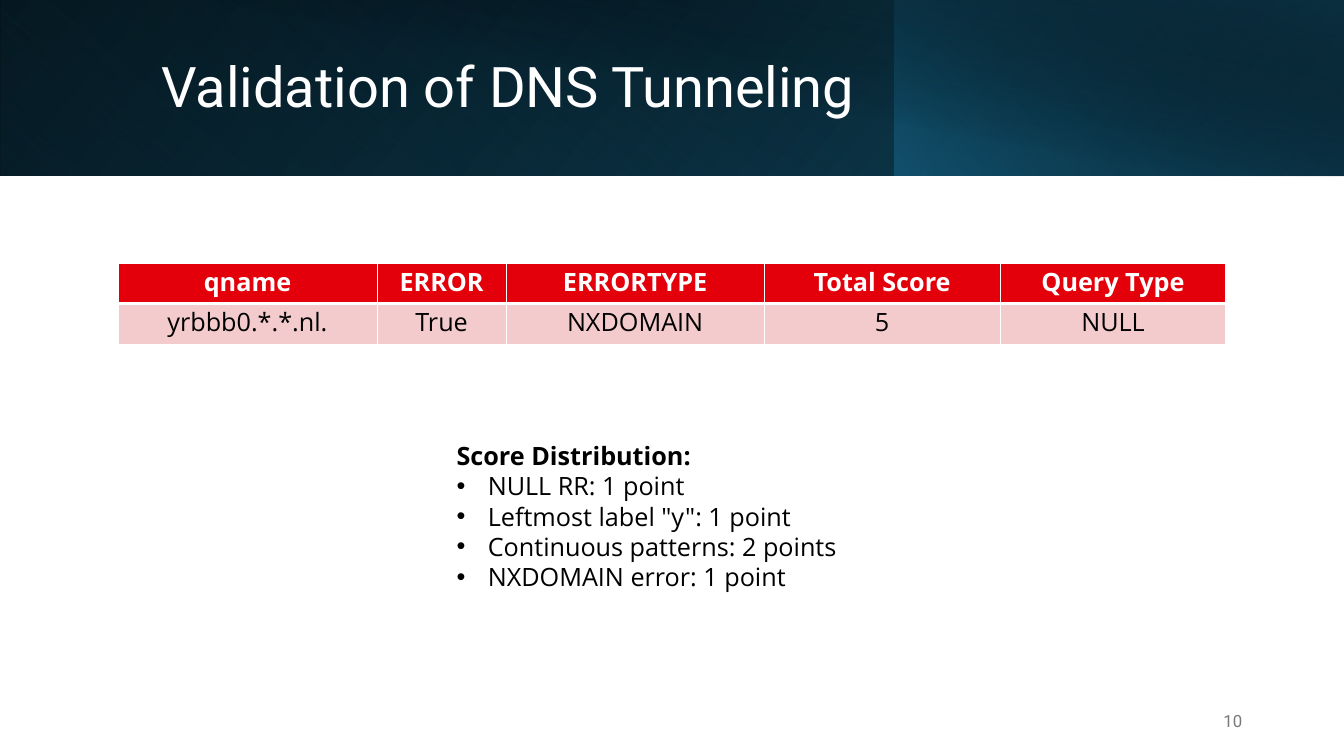
from dataclasses import dataclass

from pptx import Presentation
from pptx.dml.color import RGBColor
from pptx.enum.shapes import MSO_SHAPE
from pptx.enum.text import MSO_ANCHOR, MSO_AUTO_SIZE, PP_ALIGN
from pptx.oxml import parse_xml
from pptx.oxml.ns import nsdecls, qn
from pptx.util import Pt

EMU_PER_PX = 9144  # 100 px to the inch


@dataclass(frozen=True)
class Theme:
    white: str = "FFFFFF"
    black: str = "000000"
    blue: str = "156082"
    mid_blue: str = "104862"
    deep_blue: str = "0B3041"
    header_red: str = "E3000B"
    row_pink: str = "F4CBCC"
    grey: str = "797979"
    heading_font: str = "Roboto"
    body_font: str = "Open Sans"
    title_size: int = 40
    body_size: int = 18
    number_size: int = 12
    table_spacing: float = 21.8
    thin_border: float = 0.75
    header_border: float = 2.04


def px(length):
    return length * EMU_PER_PX


class SlideBuilder:
    def __init__(self, slide, theme):
        self.slide = slide
        self.theme = theme

    def add_run(self, paragraph, text, size, font, color, bold=False):
        run = paragraph.add_run()
        run.text = text
        run.font.size = Pt(size)
        run.font.name = font
        run.font.bold = bold
        run.font.color.rgb = RGBColor.from_string(color)

    def body_run(self, paragraph, text, color, bold=False):
        self.add_run(paragraph, text, self.theme.body_size, self.theme.body_font, color, bold)

    def gradient_band(self, box, angle, stops, flip=True, rotation=0):
        """Stops are (position %, colour, opacity %)."""
        band = self.slide.shapes.add_shape(MSO_SHAPE.RECTANGLE, *map(px, box))
        band.shadow.inherit = False
        band.line.fill.background()
        band.rotation = rotation
        properties = band.element.spPr
        if flip:
            properties.find(qn("a:xfrm")).set("flipH", "1")
        stop_xml = "".join(
            f'<a:gs pos="{position * 1000}"><a:srgbClr val="{color}">'
            f'<a:alpha val="{opacity * 1000}"/></a:srgbClr></a:gs>'
            for position, color, opacity in stops)
        properties.find(qn("a:prstGeom")).addnext(parse_xml(
            f'<a:gradFill {nsdecls("a")} rotWithShape="1"><a:gsLst>{stop_xml}</a:gsLst>'
            f'<a:lin ang="{angle * 60000}" scaled="0"/></a:gradFill>'))

    def title(self, box, text):
        title = self.slide.shapes.title
        title.left, title.top, title.width, title.height = map(px, box)
        frame = title.text_frame
        frame.word_wrap = True
        frame.auto_size = MSO_AUTO_SIZE.NONE
        frame.vertical_anchor = MSO_ANCHOR.MIDDLE
        paragraph = frame.paragraphs[0]
        paragraph.alignment = PP_ALIGN.LEFT
        paragraph.line_spacing = 0.9
        self.add_run(paragraph, text, self.theme.title_size,
                     self.theme.heading_font, self.theme.white)
        # Bring the title in front of the bands
        title.element.getparent().append(title.element)

    def text_frame(self, box):
        frame = self.slide.shapes.add_textbox(*map(px, box)).text_frame
        frame.word_wrap = True
        return frame

    def cell_borders(self, cell, top, bottom):
        thin = self.theme.thin_border
        cell_properties = cell._tc.get_or_add_tcPr()
        for side, width in (("L", thin), ("R", thin), ("T", top), ("B", bottom)):
            cell_properties.append(parse_xml(
                f'<a:ln{side} {nsdecls("a")} w="{int(Pt(width))}"><a:solidFill>'
                f'<a:srgbClr val="{self.theme.white}"/></a:solidFill></a:ln{side}>'))

    def table(self, left, top, column_widths, row_height, rows):
        theme = self.theme
        table = self.slide.shapes.add_table(
            len(rows), len(column_widths), px(left), px(top),
            px(sum(column_widths)), px(row_height * len(rows))).table
        for column, width in zip(table.columns, column_widths):
            column.width = px(width)
        for row_index, values in enumerate(rows):
            header = row_index == 0
            thin, thick = theme.thin_border, theme.header_border
            for column_index, value in enumerate(values):
                cell = table.cell(row_index, column_index)
                self.cell_borders(cell, *((thin, thick) if header else (thick, thin)))
                cell.fill.solid()
                cell.fill.fore_color.rgb = RGBColor.from_string(
                    theme.header_red if header else theme.row_pink)
                paragraph = cell.text_frame.paragraphs[0]
                paragraph.alignment = PP_ALIGN.CENTER
                paragraph.line_spacing = Pt(theme.table_spacing)
                self.body_run(paragraph, value, theme.white if header else theme.black, header)

    def bullet_list(self, box, heading, items, indent):
        frame = self.text_frame(box)
        self.body_run(frame.paragraphs[0], heading, self.theme.black, bold=True)
        for item in items:
            paragraph = frame.add_paragraph()
            properties = paragraph._p.get_or_add_pPr()
            properties.set("marL", str(px(indent)))
            properties.set("indent", str(-px(indent)))
            properties.append(parse_xml(f'<a:buFont {nsdecls("a")} typeface="Arial"/>'))
            properties.append(parse_xml(f'<a:buChar {nsdecls("a")} char="•"/>'))
            self.body_run(paragraph, item, self.theme.black)

    def page_number(self, box, number):
        frame = self.text_frame(box)
        frame.vertical_anchor = MSO_ANCHOR.MIDDLE
        paragraph = frame.paragraphs[0]
        paragraph.alignment = PP_ALIGN.RIGHT
        self.add_run(paragraph, number, self.theme.number_size,
                     self.theme.heading_font, self.theme.grey)


def main():
    theme = Theme()
    presentation = Presentation()
    presentation.slide_width, presentation.slide_height = px(1333), px(750)
    title_only = presentation.slide_layouts[5]
    builder = SlideBuilder(presentation.slides.add_slide(title_only), theme)

    # Layered header band
    builder.gradient_band((0, 0, 1333, 174), 140,
                          [(0, theme.black, 100), (100, theme.mid_blue, 100)])
    builder.gradient_band((0, 0, 888, 174), 230,
                          [(20, theme.blue, 0), (100, theme.deep_blue, 55)], rotation=180)
    builder.gradient_band((887, 0, 446, 174), 220,
                          [(0, theme.blue, 66), (100, theme.black, 30)])
    builder.gradient_band((50, 0, 1283, 175), 280,
                          [(50, theme.black, 0), (99, theme.deep_blue, 52)], flip=False)
    builder.title((150, 32, 1082, 113), "Validation of DNS Tunneling")

    # Query result
    builder.table(117, 261, [257, 128, 256, 234, 224], 40, [
        ["qname", "ERROR", "ERRORTYPE", "Total Score", "Query Type"],
        ["yrbbb0.*.*.nl.", "True", "NXDOMAIN", "5", "NULL"],
    ])

    # How the score is made up
    builder.bullet_list((443, 432, 432, 192), "Score Distribution:", [
        "NULL RR: 1 point",
        'Leftmost label "y": 1 point',
        "Continuous patterns: 2 points",
        "NXDOMAIN error: 1 point",
    ], indent=31)

    builder.page_number((942, 695, 300, 40), "10")
    presentation.save("out.pptx")


if __name__ == "__main__":
    main()
